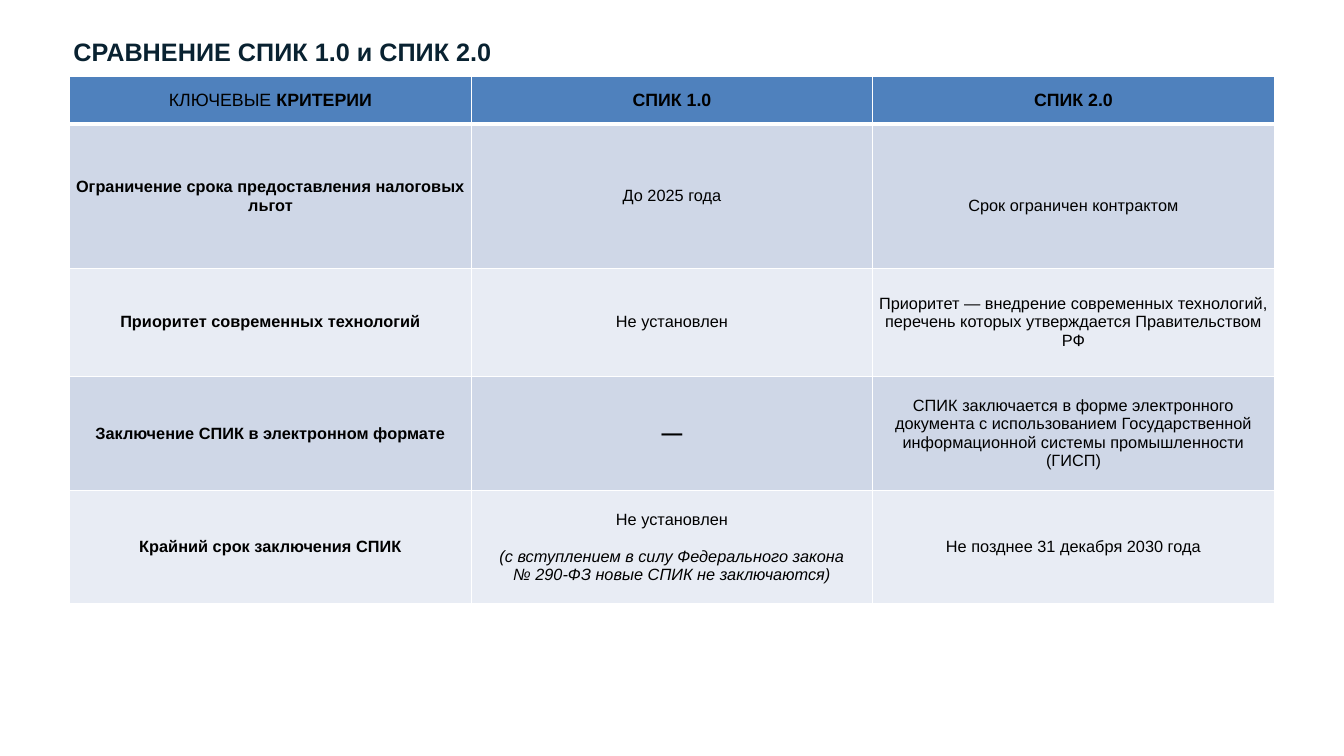
import pptx
import pptx.dml.color
import pptx.enum.text
import pptx.oxml
import pptx.oxml.ns
import pptx.util

Cm = pptx.util.Cm
Pt = pptx.util.Pt

FONT = "Arial"
INSET = 0.13
BLANK_LINE = Pt(12.65)
HEADER_FILL = "4F81BD"
BAND_FILLS = ("CFD7E7", "E8ECF4")
ROW_HEIGHTS = (1.14, 3.43, 2.57, 2.72, 2.69)

HEADERS = ("КЛЮЧЕВЫЕ КРИТЕРИИ", "СПИК 1.0", "СПИК 2.0")
CRITERIA = (
    ("Ограничение срока предоставления налоговых льгот",
     "До 2025 года",
     "Срок ограничен контрактом"),
    ("Приоритет современных технологий",
     "Не установлен",
     "Приоритет — внедрение современных технологий, "
     "перечень которых утверждается Правительством РФ"),
    ("Заключение СПИК в электронном формате",
     "—",
     "СПИК заключается в форме электронного документа с использованием "
     "Государственной информационной системы промышленности (ГИСП)"),
    ("Крайний срок заключения СПИК",
     "Не установлен",
     "Не позднее 31 декабря 2030 года"),
)
CLOSING_NOTE = ("(с вступлением в силу Федерального закона",
                "№ 290-ФЗ новые СПИК не заключаются)")


def color(value):
    return pptx.dml.color.RGBColor.from_string(value)


def add_span(para, text, size, bold=False, italic=False, ink="000000"):
    span = para.add_run()
    span.text = text
    span.font.name = FONT
    span.font.size = Pt(size)
    span.font.bold = bold
    span.font.italic = italic
    span.font.color.rgb = color(ink)


def set_borders(cell, bottom_width):
    properties = cell._tc.get_or_add_tcPr()
    for side, width in (("L", 1), ("R", 1), ("T", 1), ("B", bottom_width)):
        properties.append(pptx.oxml.parse_xml(
            f'<a:ln{side} {pptx.oxml.ns.nsdecls("a")} w="{Pt(width)}">'
            '<a:solidFill><a:srgbClr val="FFFFFF"/></a:solidFill>'
            f'</a:ln{side}>'))


def style_cell(cell, fill, bottom_width=1):
    set_borders(cell, bottom_width)
    cell.fill.solid()
    cell.fill.fore_color.rgb = color(fill)
    cell.vertical_anchor = pptx.enum.text.MSO_ANCHOR.MIDDLE
    cell.margin_left = cell.margin_right = Cm(INSET)
    cell.margin_top = cell.margin_bottom = Cm(INSET)
    para = cell.text_frame.paragraphs[0]
    para.alignment = pptx.enum.text.PP_ALIGN.CENTER
    return para


def add_title(page, left, top, width, height):
    box = page.shapes.add_textbox(Cm(left), Cm(top), Cm(width), Cm(height))
    frame = box.text_frame
    frame.word_wrap = True
    frame.vertical_anchor = pptx.enum.text.MSO_ANCHOR.MIDDLE
    frame.margin_left = frame.margin_right = 0
    frame.margin_top = frame.margin_bottom = 0
    add_span(frame.paragraphs[0], "СРАВНЕНИЕ СПИК 1.0 и СПИК 2.0", 17,
             bold=True, ink="092231")


def add_closing_note(cell):
    para = cell.text_frame.add_paragraph()
    para.alignment = pptx.enum.text.PP_ALIGN.CENTER
    para.space_before = BLANK_LINE
    first, second = CLOSING_NOTE
    add_span(para, first, 11, italic=True)
    para.add_line_break()
    add_span(para, second, 11, italic=True)


def add_comparison(page, left, top, width):
    frame = page.shapes.add_table(
        len(ROW_HEIGHTS), len(HEADERS), Cm(left), Cm(top),
        Cm(width), Cm(sum(ROW_HEIGHTS)))
    table = frame.table
    for column in table.columns:
        column.width = Cm(width / len(HEADERS))
    for row, height in zip(table.rows, ROW_HEIGHTS):
        row.height = Cm(height)

    for index, header in enumerate(HEADERS):
        para = style_cell(table.cell(0, index), HEADER_FILL, bottom_width=3)
        if index == 0:
            lead, rest = header.split()
            add_span(para, lead + " ", 12)
            add_span(para, rest, 12, bold=True)
        else:
            add_span(para, header, 12, bold=True)

    for row_index, texts in enumerate(CRITERIA, start=1):
        fill = BAND_FILLS[(row_index - 1) % 2]
        for index, text in enumerate(texts):
            para = style_cell(table.cell(row_index, index), fill)
            is_dash = text == "—"
            add_span(para, text, 14 if is_dash else 11,
                     bold=index == 0 or is_dash)

    table.cell(1, 2).margin_top = Cm(INSET) + BLANK_LINE
    add_closing_note(table.cell(len(CRITERIA), 1))


def main():
    deck = pptx.Presentation()
    deck.slide_width = Cm(32)
    deck.slide_height = Cm(18)
    page = deck.slides.add_slide(deck.slide_layouts[6])
    add_title(page, 1.75, 0.79, 10.44, 0.89)
    add_comparison(page, 1.66, 1.82, 28.68)
    deck.save("out.pptx")


if __name__ == "__main__":
    main()
